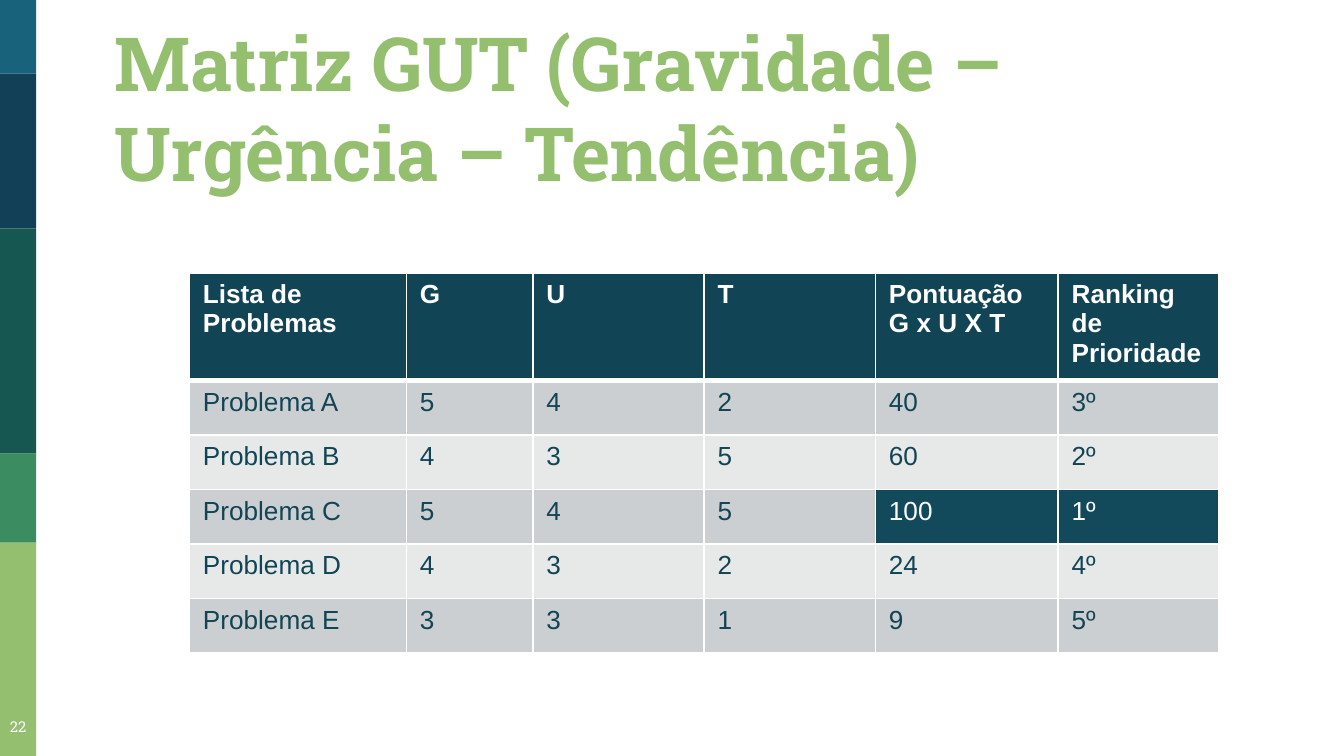
from dataclasses import dataclass
from itertools import pairwise

import pptx
import pptx.dml.color
import pptx.enum.shapes
import pptx.enum.text
import pptx.oxml
import pptx.oxml.ns
import pptx.util

RGBColor = pptx.dml.color.RGBColor
Anchor = pptx.enum.text.MSO_ANCHOR
Align = pptx.enum.text.PP_ALIGN

WHITE = RGBColor(0xFF, 0xFF, 0xFF)
LIME = RGBColor(0x94, 0xBF, 0x6E)
DARK_TEAL = RGBColor(0x11, 0x44, 0x54)
HIGHLIGHT = RGBColor(0x12, 0x4A, 0x5C)
ROW_FILLS = (RGBColor(0xCC, 0xCF, 0xD1), RGBColor(0xE7, 0xE9, 0xE9))
BAND_COLORS = (
    RGBColor(0x18, 0x63, 0x7B),
    RGBColor(0x12, 0x40, 0x57),
    RGBColor(0x16, 0x57, 0x51),
    RGBColor(0x3B, 0x8D, 0x61),
    LIME,
)

SLIDE_WIDTH = pptx.util.Inches(10)
SLIDE_HEIGHT = SLIDE_WIDTH * 9 // 16

# Positions and sizes below are percentages of the slide's width or height.
BAND_WIDTH = 2.7
BAND_EDGES = (0, 9.75, 30.22, 60, 71.8, 100)
COLUMN_WIDTHS = (16.15, 9.4, 12.75, 12.75, 13.6, 11.95)
ROW_HEIGHT = 7.21
TABLE_HEIGHT = 50.3

HEADERS = ("Lista de Problemas", "G", "U", "T", "Pontuação\nG x U X T", "Ranking de Prioridade")


@dataclass(frozen=True)
class Area:
    left: float
    top: float
    width: float
    height: float

    def box(self) -> tuple[int, int, int, int]:
        return across(self.left), down(self.top), across(self.width), down(self.height)


@dataclass(frozen=True)
class Problem:
    name: str
    gravity: int
    urgency: int
    tendency: int

    @property
    def score(self) -> int:
        return self.gravity * self.urgency * self.tendency


PROBLEMS = (
    Problem("Problema A", 5, 4, 2),
    Problem("Problema B", 4, 3, 5),
    Problem("Problema C", 5, 4, 5),
    Problem("Problema D", 4, 3, 2),
    Problem("Problema E", 3, 3, 1),
)


def across(percent: float) -> int:
    return round(SLIDE_WIDTH * percent / 100)


def down(percent: float) -> int:
    return round(SLIDE_HEIGHT * percent / 100)


def write_text(text_frame, text: str, *, size: float, color: RGBColor,
               font: str = "Arial", bold: bool = False, align=Align.LEFT) -> None:
    text_frame.word_wrap = True
    text_frame.text = text
    for paragraph in text_frame.paragraphs:
        paragraph.alignment = align
        paragraph.font.name = font
        paragraph.font.size = pptx.util.Pt(size)
        paragraph.font.bold = bold
        paragraph.font.color.rgb = color


def add_text(slide, area: Area, text: str, *, anchor=Anchor.TOP, **text_format) -> None:
    text_frame = slide.shapes.add_textbox(*area.box()).text_frame
    text_frame.vertical_anchor = anchor
    text_frame.margin_left = text_frame.margin_right = pptx.util.Inches(0.1)
    text_frame.margin_top = text_frame.margin_bottom = pptx.util.Inches(0.1)
    write_text(text_frame, text, font="Roboto Slab", **text_format)


def add_side_bands(slide) -> None:
    for color, (top, bottom) in zip(BAND_COLORS, pairwise(BAND_EDGES)):
        band = slide.shapes.add_shape(
            pptx.enum.shapes.MSO_SHAPE.RECTANGLE,
            *Area(0, top, BAND_WIDTH, bottom - top).box())
        band.shadow.inherit = False
        band.fill.solid()
        band.fill.fore_color.rgb = color
        band.line.fill.background()


def set_borders(cell, bottom_width: float) -> None:
    """Draw white borders, 1 pt except at the bottom; call before filling the cell."""
    properties = cell._tc.get_or_add_tcPr()
    for side, width in (("L", 1), ("R", 1), ("T", 1), ("B", bottom_width)):
        properties.append(pptx.oxml.parse_xml(
            f'<a:ln{side} {pptx.oxml.ns.nsdecls("a")} w="{pptx.util.Pt(width)}">'
            f'<a:solidFill><a:srgbClr val="{WHITE}"/></a:solidFill></a:ln{side}>'))


def fill_cell(cell, text: str, fill: RGBColor, color: RGBColor, *,
              bold: bool = False, bottom_width: float = 1) -> None:
    set_borders(cell, bottom_width)
    cell.fill.solid()
    cell.fill.fore_color.rgb = fill
    write_text(cell.text_frame, text, size=14, color=color, bold=bold)


def add_matrix(slide) -> None:
    area = Area(14.1, 36.1, sum(COLUMN_WIDTHS), TABLE_HEIGHT)
    frame = slide.shapes.add_table(len(PROBLEMS) + 1, len(HEADERS), *area.box())
    table = frame.table
    for column, width in zip(table.columns, COLUMN_WIDTHS):
        column.width = across(width)
    for row in table.rows:
        row.height = down(ROW_HEIGHT)
    # The frame leaves room for the header row, which grows with its text.
    frame.height = down(TABLE_HEIGHT)

    for column, header in enumerate(HEADERS):
        fill_cell(table.cell(0, column), header, DARK_TEAL, WHITE, bold=True, bottom_width=3)

    scores = sorted((problem.score for problem in PROBLEMS), reverse=True)
    for index, problem in enumerate(PROBLEMS):
        rank = scores.index(problem.score) + 1
        values = (problem.name, problem.gravity, problem.urgency, problem.tendency,
                  problem.score, f"{rank}º")
        for column, value in enumerate(values):
            is_top = rank == 1 and column >= 4
            fill = HIGHLIGHT if is_top else ROW_FILLS[index % 2]
            color = WHITE if is_top else DARK_TEAL
            fill_cell(table.cell(index + 1, column), str(value), fill, color)


def main() -> None:
    presentation = pptx.Presentation()
    presentation.slide_width = SLIDE_WIDTH
    presentation.slide_height = SLIDE_HEIGHT
    slide = presentation.slides.add_slide(presentation.slide_layouts[6])
    add_side_bands(slide)
    add_text(slide, Area(7.54, 5.16, 87.4, 22.6),
             "Matriz GUT (Gravidade – Urgência – Tendência)",
             size=40, color=LIME, bold=True, anchor=Anchor.BOTTOM)
    add_text(slide, Area(-0.55, 93.77, 3.8, 6.23), "22",
             size=8, color=WHITE, align=Align.CENTER)
    add_matrix(slide)
    presentation.save("out.pptx")


if __name__ == "__main__":
    main()
